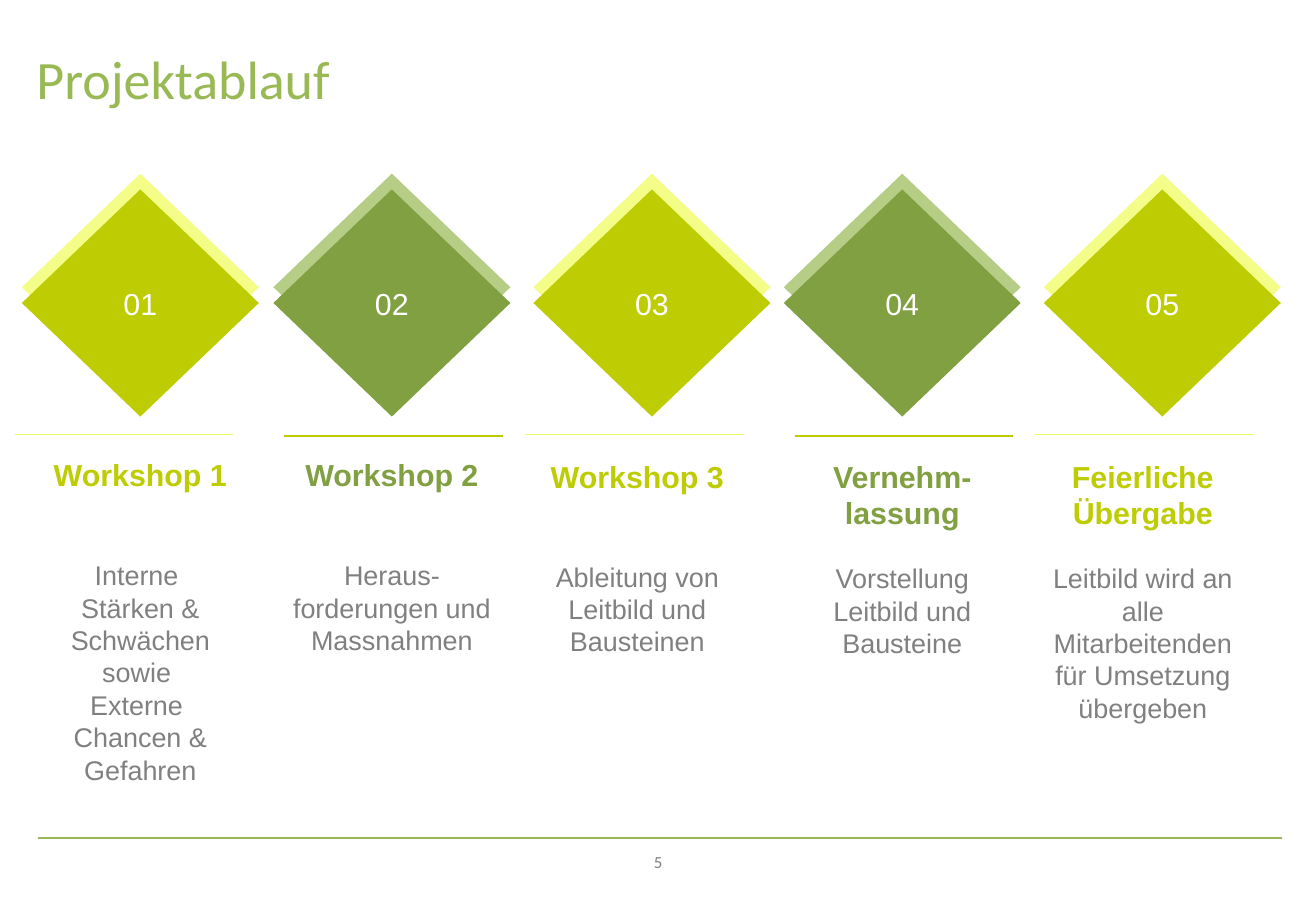
from dataclasses import dataclass

from lxml.etree import SubElement
from pptx import Presentation
from pptx.dml.color import RGBColor
from pptx.enum.shapes import MSO_CONNECTOR as Connector, MSO_SHAPE as Shape
from pptx.enum.text import MSO_ANCHOR as Anchor, MSO_AUTO_SIZE as AutoSize, PP_ALIGN as Align
from pptx.oxml.ns import qn
from pptx.util import Inches, Pt

LIME, PALE_LIME, LIME_RULE = "BECC04", "F5FD89", "EFFA5E"
GREEN, PALE_GREEN, GREEN_RULE = "81A042", "B6CD86", "BDCB00"
ACCENT, GREY, WHITE = "98B954", "808080", "FFFFFF"


def rgb(value):
    return RGBColor.from_string(value)


@dataclass
class Step:
    heading: str
    details: list
    gap: float
    diamond_left: float
    rule_left: float
    text_box: tuple


class ProcessSlide:
    """Draws the elements of a process slide in one shared style."""

    def __init__(self, deck):
        self.slide = deck.slides.add_slide(deck.slide_layouts[5])
        self.body_font = "Arial"
        self.title_font = "Calibri"

    def format(self, paragraph, size, color, font, bold=False, align=Align.CENTER):
        paragraph.alignment = align
        for run in paragraph.runs:
            run.font.size = Pt(size)
            run.font.name = font
            run.font.bold = bold
            run.font.color.rgb = rgb(color)

    def frame(self, text_frame, anchor, inset=None):
        text_frame.word_wrap = True
        text_frame.auto_size = AutoSize.NONE
        text_frame.vertical_anchor = anchor
        if inset is not None:
            text_frame.margin_left = text_frame.margin_right = Inches(inset)
            text_frame.margin_top = text_frame.margin_bottom = Inches(inset)

    def title(self, text):
        title = self.slide.shapes.title
        title.left, title.top = Inches(0.3), Inches(0)
        title.width, title.height = Inches(10.23), Inches(0.91)
        title.text_frame.text = text
        self.frame(title.text_frame, Anchor.BOTTOM, 0)
        self.format(title.text_frame.paragraphs[0], 32, ACCENT, self.title_font, align=Align.LEFT)

    def rule(self, shapes, left, right, top, color):
        rule = shapes.add_connector(
            Connector.STRAIGHT, Inches(left), Inches(top), Inches(right), Inches(top))
        rule.line.color.rgb = rgb(color)
        rule.line.width = Pt(0.75)
        SubElement(rule._element.spPr, qn("a:effectLst"))

    def diamond(self, shapes, left, top, color, label=""):
        diamond = shapes.add_shape(
            Shape.DIAMOND, Inches(left), Inches(top), Inches(1.95), Inches(1.87))
        diamond.shadow.inherit = False
        diamond.fill.solid()
        diamond.fill.fore_color.rgb = rgb(color)
        diamond.line.fill.background()
        if label:
            diamond.text_frame.text = label
            self.frame(diamond.text_frame, Anchor.MIDDLE)
            self.format(diamond.text_frame.paragraphs[0], 18, WHITE, self.body_font)

    def marker(self, number, step, color, pale, rule_color, rule_top):
        shapes = self.slide.shapes.add_group_shape().shapes
        self.rule(shapes, step.rule_left, step.rule_left + 1.8, rule_top, rule_color)
        self.diamond(shapes, step.diamond_left, 1.43, pale)
        self.diamond(shapes, step.diamond_left, 1.56, color, f"{number:02}")

    def description(self, step, color):
        column = self.slide.shapes.add_textbox(*map(Inches, step.text_box)).text_frame
        self.frame(column, Anchor.TOP)
        column.text = step.heading
        self.format(column.paragraphs[0], 18, color, self.body_font, bold=True)
        for index, detail in enumerate(step.details):
            paragraph = column.add_paragraph()
            paragraph.text = detail
            paragraph.space_before = Pt(0 if index else step.gap)
            self.format(paragraph, 16, GREY, self.body_font)

    def footer(self, number):
        self.rule(self.slide.shapes, 0.31, 10.55, 6.9, ACCENT)
        page = self.slide.shapes.add_textbox(
            Inches(4.69), Inches(7.01), Inches(1.45), Inches(0.17)).text_frame
        page.text = number
        self.frame(page, Anchor.MIDDLE, 0)
        self.format(page.paragraphs[0], 10, GREY, self.title_font)


STEPS = [
    Step("Workshop 1",
         ["Interne \vStärken & Schwächen sowie ", "Externe \vChancen & Gefahren"],
         39, 0.18, 0.12, (0.18, 3.71, 1.95, 2.86)),
    Step("Workshop 2", ["Heraus-forderungen und Massnahmen"],
         39, 2.25, 2.34, (2.25, 3.71, 1.95, 1.78)),
    Step("Workshop 3", ["Ableitung von Leitbild und Bausteinen"],
         39, 4.39, 4.32, (4.24, 3.72, 2.01, 1.78)),
    Step("Vernehm-lassung", ["Vorstellung Leitbild und Bausteine"],
         18.4, 6.45, 6.54, (6.45, 3.72, 1.95, 1.78)),
    Step("Feierliche Übergabe",
         ["Leitbild wird an alle Mitarbeitenden für Umsetzung übergeben"],
         18.4, 8.59, 8.52, (8.52, 3.72, 1.77, 2.32)),
]
PALETTES = [(LIME, PALE_LIME, LIME_RULE, 3.58), (GREEN, PALE_GREEN, GREEN_RULE, 3.59)]


def main():
    deck = Presentation()
    deck.slide_width, deck.slide_height = Inches(10.83), Inches(7.5)
    process = ProcessSlide(deck)
    process.title("Projektablauf")
    process.footer("5")
    for index, step in enumerate(STEPS):
        palette = PALETTES[index % 2]
        process.description(step, palette[0])
        process.marker(index + 1, step, *palette)
    deck.save("out.pptx")


if __name__ == "__main__":
    main()
